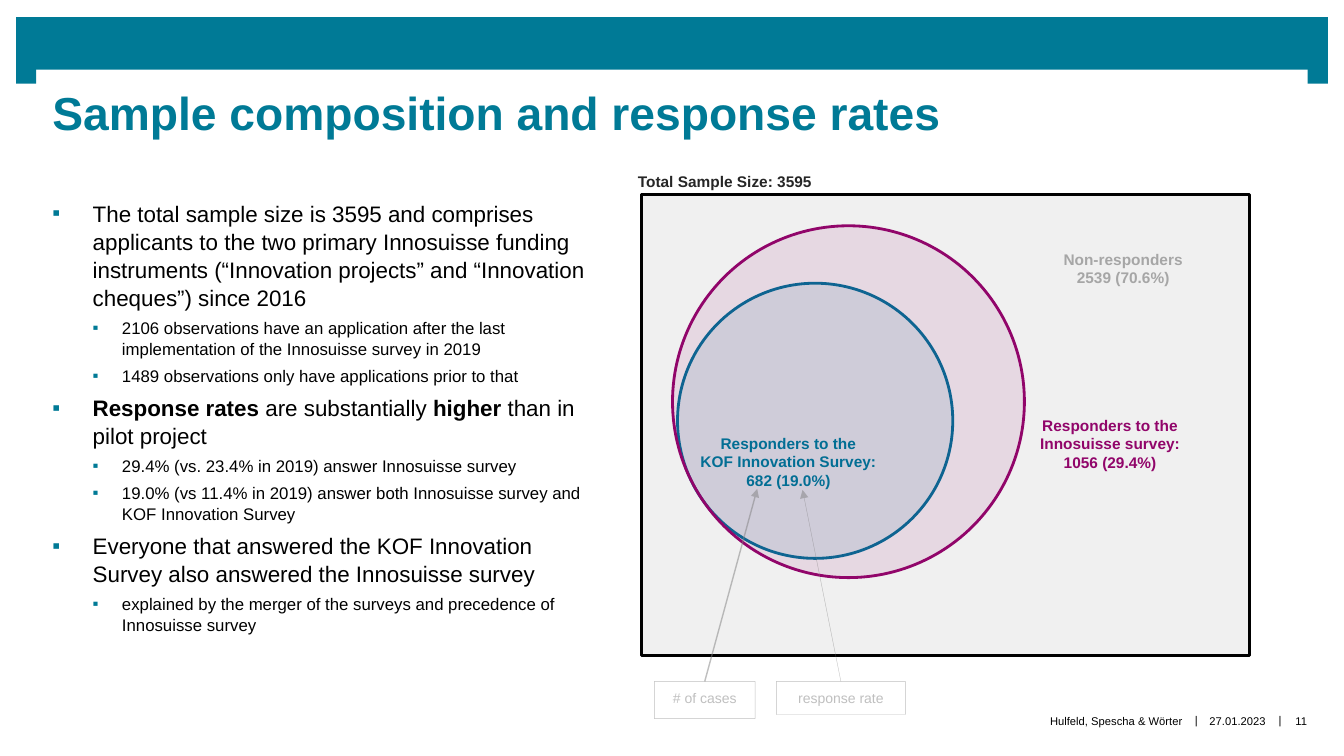
from lxml import etree
from pptx import Presentation
from pptx.dml.color import RGBColor
from pptx.enum.shapes import MSO_CONNECTOR, MSO_SHAPE
from pptx.enum.text import MSO_ANCHOR, PP_ALIGN
from pptx.oxml.ns import qn
from pptx.util import Inches, Pt

RECTANGLE, OVAL = MSO_SHAPE.RECTANGLE, MSO_SHAPE.OVAL
STRAIGHT = MSO_CONNECTOR.STRAIGHT
TOP, MIDDLE, BOTTOM = MSO_ANCHOR.TOP, MSO_ANCHOR.MIDDLE, MSO_ANCHOR.BOTTOM
LEFT, CENTER, RIGHT = PP_ALIGN.LEFT, PP_ALIGN.CENTER, PP_ALIGN.RIGHT

TEAL = RGBColor(0x00, 0x7A, 0x96)
BLUE = RGBColor(0x00, 0x6F, 0x96)
LABEL_BLUE = RGBColor(0x02, 0x6E, 0x94)
PURPLE = RGBColor(0x91, 0x05, 0x6A)
BLACK = RGBColor(0x00, 0x00, 0x00)
WHITE = RGBColor(0xFF, 0xFF, 0xFF)
DARK_GRAY = RGBColor(0x26, 0x26, 0x26)
MID_GRAY = RGBColor(0x80, 0x80, 0x80)
LIGHT_GRAY = RGBColor(0xA6, 0xA6, 0xA6)
PALE_GRAY = RGBColor(0xB4, 0xB4, 0xB4)

COLUMNS, ROWS = 133.3, 75
CELL = Inches(0.1)
FONT = "Arial"
LINE_SPACING = 1.05


def grid(*cells):
    """Turn columns and rows of the grid into lengths."""
    return [round(cell * CELL) for cell in cells]


def write(shape, lines, size, color, bold=False, align=CENTER, anchor=MIDDLE,
          insets=(0, 0, 0, 0)):
    frame = shape.text_frame
    frame.word_wrap = True
    frame.vertical_anchor = anchor
    (frame.margin_left, frame.margin_top,
     frame.margin_right, frame.margin_bottom) = grid(*insets)
    for index, line in enumerate(lines):
        paragraph = frame.add_paragraph() if index else frame.paragraphs[0]
        paragraph.alignment = align
        run = paragraph.add_run()
        run.text = line
        run.font.name = FONT
        run.font.size = Pt(size)
        run.font.bold = bold
        run.font.color.rgb = color


presentation = Presentation()
presentation.slide_width, presentation.slide_height = grid(COLUMNS, ROWS)
slide = presentation.slides.add_slide(presentation.slide_layouts[5])
shapes = slide.shapes

# Header band with its two end tabs
for cells in [(1.6, 1.7, 130.1, 5.2), (1.6, 6.5, 2, 1.8), (129.7, 6.5, 2, 1.8)]:
    band = shapes.add_shape(RECTANGLE, *grid(*cells))
    band.shadow.inherit = False
    band.fill.solid()
    band.fill.fore_color.rgb = TEAL
    band.line.fill.background()

title = shapes.title
title.left, title.top, title.width, title.height = grid(3.6, 6.8, 126.1, 7.1)
write(title, ["Sample composition and response rates"], 33, TEAL, True, LEFT,
      BOTTOM, (1.6, 3.1, 1.6, 0))

# Bulleted findings: level and runs, each run with its weight
findings = [
    (0, [("The total sample size is 3595 and comprises applicants to the two "
          "primary Innosuisse funding instruments (“Innovation projects” and "
          "“Innovation cheques”) since 2016", False)]),
    (1, [("2106 observations have an application after the last "
          "implementation of the Innosuisse survey in 2019", False)]),
    (1, [("1489 observations only have applications prior to that", False)]),
    (0, [("Response rates ", True), ("are substantially ", False),
         ("higher ", True), ("than in pilot project", False)]),
    (1, [("29.4% (vs. 23.4% in 2019) answer Innosuisse survey", False)]),
    (1, [("19.0% (vs 11.4% in 2019) answer both Innosuisse survey and KOF "
          "Innovation Survey", False)]),
    (0, [("Everyone that answered the KOF Innovation Survey also answered the "
          "Innosuisse survey", False)]),
    (1, [("explained by the merger of the surveys and precedence of "
          "Innosuisse survey", False)]),
]
LEVELS = [(16, 5, 4, 4), (12, 4, 6.9, 2.9)]  # size, space before, margin, hanging
body = shapes.add_textbox(*grid(3.7, 19.7, 57.3, 46.9)).text_frame
body.word_wrap = True
(body.margin_left, body.margin_top,
 body.margin_right, body.margin_bottom) = grid(1.5, 0, 1.6, 0)
for index, (level, runs) in enumerate(findings):
    size, space_before, margin, hanging = LEVELS[level]
    paragraph = body.add_paragraph() if index else body.paragraphs[0]
    paragraph.level = level
    paragraph.line_spacing = LINE_SPACING
    if index:
        paragraph.space_before = Pt(space_before)
    properties = paragraph._p.get_or_add_pPr()
    margin, hanging = grid(margin, hanging)
    properties.set("marL", str(margin))
    properties.set("indent", str(-hanging))
    bullet_color = etree.SubElement(properties, qn("a:buClr"))
    etree.SubElement(bullet_color, qn("a:srgbClr"), val=str(TEAL))
    etree.SubElement(properties, qn("a:buFont"), typeface=FONT)
    etree.SubElement(properties, qn("a:buChar"), char="▪")
    for text, bold in runs:
        run = paragraph.add_run()
        run.text = text
        run.font.name = FONT
        run.font.size = Pt(size)
        run.font.bold = bold
        run.font.color.rgb = BLACK

# Footer
for text, cells, align in [
    ("Hulfeld, Spescha & Wörter", (3.6, 69, 113.7, 5), RIGHT),
    ("|", (117.9, 68.9, 1.5, 5.1), CENTER),
    ("27.01.2023", (119.4, 69, 6.7, 5.1), CENTER),
    ("|", (126.2, 68.9, 1.5, 5.1), CENTER),
    ("11", (127.1, 69, 3.9, 5.1), CENTER),
]:
    write(shapes.add_textbox(*grid(*cells)), [text], 8, BLACK, align=align)

# Nested sample sets, from back to front
faded = []  # shape, colours to fade, opacity in percent
for kind, cells, fill, outline, opacity in [
    (RECTANGLE, (63.6, 19.3, 60.3, 45.7), PALE_GRAY, BLACK, 20),
    (OVAL, (67.2, 28.1, 27.3, 27.3), TEAL, BLUE, 10),
    (OVAL, (66.7, 22.4, 34.9, 34.9), PURPLE, PURPLE, 10),
]:
    sample = shapes.add_shape(kind, *grid(*cells))
    sample.shadow.inherit = False
    sample.fill.solid()
    sample.fill.fore_color.rgb = fill
    sample.line.color.rgb = outline
    sample.line.width = Pt(2)
    faded.append((sample, "p:spPr/a:solidFill/a:srgbClr", opacity))

for lines, cells, color in [
    (["Responders to the", "KOF Innovation Survey:", "682 (19.0%)"],
     (62.6, 42.6, 31.2, 6.4), LABEL_BLUE),
    (["Responders to the", "Innosuisse survey:", "1056 (29.4%)"],
     (94.5, 40.8, 31.2, 6.4), PURPLE),
    (["Non-responders", "2539 (70.6%)"], (95.8, 24.8, 31.2, 3.7), LIGHT_GRAY),
    (["Total Sample Size: 3595"], (60.1, 14.8, 23.6, 6.4), DARK_GRAY),
]:
    write(shapes.add_textbox(*grid(*cells)), lines, 11, color, True)

# Callouts explaining the two figures
for text, cells, target, width in [
    ("# of cases", (64.9, 67.6, 10, 3.7), (75.1, 48.5), 1),
    ("response rate", (77, 67.6, 12.8, 3.3), (79.6, 48.6), 0.25),
]:
    callout = shapes.add_shape(RECTANGLE, *grid(*cells))
    callout.shadow.inherit = False
    callout.fill.solid()
    callout.fill.fore_color.rgb = WHITE
    callout.line.color.rgb = MID_GRAY
    callout.line.width = Pt(0.25)
    write(callout, [text], 10, MID_GRAY, anchor=TOP, insets=[0.8] * 4)
    arrow = shapes.add_connector(STRAIGHT, 0, 0, *grid(*target))
    arrow.begin_connect(callout, 0)
    arrow.line.color.rgb = MID_GRAY
    arrow.line.width = Pt(width)
    etree.SubElement(arrow.line._get_or_add_ln(), qn("a:tailEnd"), type="triangle")
    etree.SubElement(arrow._element.spPr, qn("a:effectLst"))
    faded += [(callout, "p:spPr/a:ln//a:srgbClr | .//a:rPr//a:srgbClr", 50),
              (arrow, "p:spPr/a:ln//a:srgbClr", 50)]

for shape, colors, opacity in faded:
    for color in shape._element.xpath(colors):
        etree.SubElement(color, qn("a:alpha"), val=str(opacity * 1000))

presentation.save("out.pptx")
